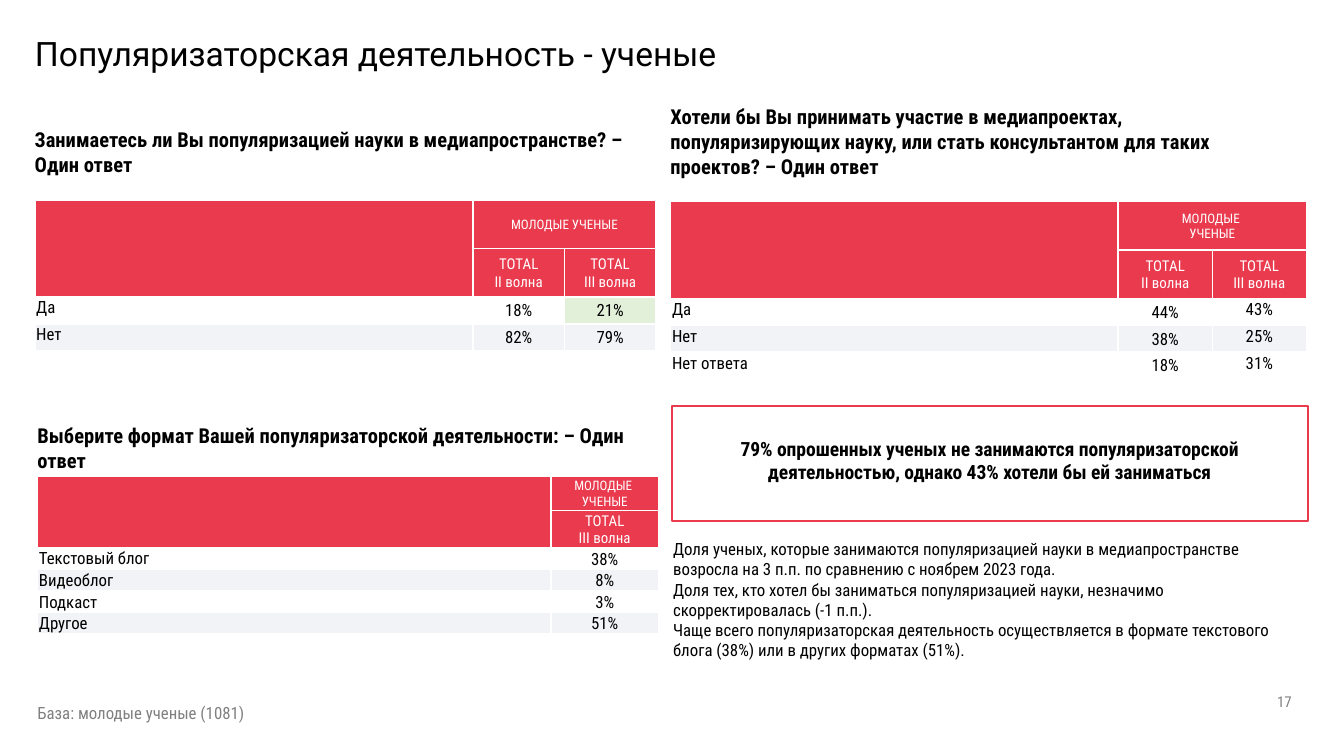
from lxml import etree
from pptx import Presentation
from pptx.dml.color import RGBColor
from pptx.enum import shapes, text
from pptx.oxml.ns import qn
from pptx.util import Inches, Pt

COLORS = {"red": "E93A4E", "white": "FFFFFF", "black": "000000",
          "gray": "808080", "stripe": "F2F3F6", "green": "E2F0D9"}
FONT = "Roboto Condensed"
LEFT, CENTER, RIGHT = text.PP_ALIGN.LEFT, text.PP_ALIGN.CENTER, text.PP_ALIGN.RIGHT
TOP, MIDDLE = text.MSO_ANCHOR.TOP, text.MSO_ANCHOR.MIDDLE


def write(frame, lines, size, color="black", bold=False, align=LEFT, spacing=None, font=FONT):
    for index, line in enumerate(lines):
        paragraph = frame.paragraphs[0] if index == 0 else frame.add_paragraph()
        paragraph.alignment = align
        paragraph.line_spacing = spacing
        run = paragraph.add_run()
        run.text = line
        run.font.name = font
        run.font.size = Pt(size)
        run.font.bold = bold
        run.font.color.rgb = RGBColor.from_string(COLORS[color])


def format_cell(cell, lines, size, color, fill, align, anchor):
    cell.margin_left = cell.margin_right = cell.margin_top = Inches(0.01)
    cell.margin_bottom = 0
    cell.vertical_anchor = anchor
    properties = cell._tc.get_or_add_tcPr()
    for side in ("a:lnL", "a:lnR", "a:lnT", "a:lnB"):
        border = etree.SubElement(properties, qn(side), w=str(Pt(1)))
        solid = etree.SubElement(border, qn("a:solidFill"))
        etree.SubElement(solid, qn("a:srgbClr"), val=COLORS["white"])
    if fill:
        cell.fill.solid()
        cell.fill.fore_color.rgb = RGBColor.from_string(COLORS[fill])
    else:
        cell.fill.background()
    if lines:
        write(cell.text_frame, lines, size, color, align=align)
    else:
        # Keeps an empty cell from stretching its row
        etree.SubElement(cell.text_frame.paragraphs[0]._p, qn("a:endParaRPr"), sz=str(size * 100))


# Widescreen slide, 16:9
presentation = Presentation()
presentation.slide_width = Inches(10)
presentation.slide_height = Inches(10) * 9 // 16
slide = presentation.slides.add_slide(presentation.slide_layouts[5])

# Title
title = slide.shapes.title
title.left, title.top, title.width, title.height = map(Inches, (0.16, 0.15, 8.62, 1.09))
frame = title.text_frame
frame.auto_size = text.MSO_AUTO_SIZE.NONE
frame.vertical_anchor = TOP
frame.margin_top = Inches(0.12)
write(frame, ["Популяризаторская деятельность - ученые"], 18, spacing=Pt(20), font="Roboto")

# Callout frame
callout = slide.shapes.add_shape(shapes.MSO_SHAPE.RECTANGLE, Inches(5), Inches(3.02),
                                 Inches(4.73), Inches(0.86))
callout.shadow.inherit = False
callout.fill.background()
callout.line.color.rgb = RGBColor.from_string(COLORS["red"])
callout.line.width = Pt(1)

# Question headings
headings = [
    (0.16, 0.84, "Занимаетесь ли Вы популяризацией науки в медиапространстве? – Один ответ"),
    (4.89, 0.67, "Хотели бы Вы принимать участие в медиапроектах, популяризирующих науку, "
                 "или стать консультантом для таких проектов? – Один ответ"),
    (0.18, 3.04, "Выберите формат Вашей популяризаторской деятельности: – Один ответ"),
]
for left, top, question in headings:
    box = slide.shapes.add_textbox(Inches(left), Inches(top), Inches(4.73), Inches(0.45))
    frame = box.text_frame
    frame.word_wrap = True
    frame.margin_left = frame.margin_right = frame.margin_top = frame.margin_bottom = Inches(0.1)
    write(frame, [question], 11, bold=True, spacing=1.02)

# Conclusion, comments, base and page number
notes = [
    ((5, 3.2, 4.73, 0.45), 10.5, "black", True, CENTER, TOP,
     ["79% опрошенных ученых не занимаются популяризаторской деятельностью, "
      "однако 43% хотели бы ей заниматься"]),
    ((4.91, 3.96, 4.82, 1.01), 9, "black", False, LEFT, TOP,
     ["Доля ученых, которые занимаются популяризацией науки в медиапространстве возросла "
      "на 3 п.п. по сравнению с ноябрем 2023 года.",
      "Доля тех, кто хотел бы заниматься популяризацией науки, незначимо скорректировалась (-1 п.п.).",
      "Чаще всего популяризаторская деятельность осуществляется в формате текстового блога (38%) "
      "или в других форматах (51%)."]),
    ((0.18, 5.18, 4.82, 0.25), 9, "gray", False, LEFT, TOP, ["База: молодые ученые (1081)"]),
    ((7.46, 5.07, 2.25, 0.3), 8, "gray", False, RIGHT, MIDDLE, ["17"]),
]
for position, size, color, bold, align, anchor, lines in notes:
    box = slide.shapes.add_textbox(*map(Inches, position))
    box.text_frame.word_wrap = True
    box.text_frame.vertical_anchor = anchor
    write(box.text_frame, lines, size, color, bold, align)

# Tables: place, column widths, header and body row heights, group lines, waves,
# anchor of the last column, highlighted cell, body rows
tables = [
    (0.26, 1.49, (3.26, 0.68, 0.68), 0.36, 0.2, ["МОЛОДЫЕ УЧЕНЫЕ"], ("II", "III"),
     MIDDLE, (2, 2), [("Да", "18%", "21%"), ("Нет", "82%", "79%")]),
    (4.99, 1.5, (3.33, 0.7, 0.7), 0.36, 0.2, ["МОЛОДЫЕ ", "УЧЕНЫЕ"], ("II", "III"),
     TOP, None, [("Да", "44%", "43%"), ("Нет", "38%", "25%"), ("Нет ответа", "18%", "31%")]),
    (0.28, 3.54, (3.82, 0.8), 0.26, 0.16, ["МОЛОДЫЕ ", "УЧЕНЫЕ"], ("III",),
     MIDDLE, None, [("Текстовый блог", "38%"), ("Видеоблог", "8%"), ("Подкаст", "3%"),
                    ("Другое", "51%")]),
]
for left, top, widths, head, body, group, waves, last_anchor, highlight, answers in tables:
    heights = [head] * 2 + [body] * len(answers)
    table = slide.shapes.add_table(len(heights), len(widths), Inches(left), Inches(top),
                                   Inches(sum(widths)), Inches(sum(heights))).table
    table.first_row = table.horz_banding = False
    for column, width in zip(table.columns, widths):
        column.width = Inches(width)
    for row, height in zip(table.rows, heights):
        row.height = Inches(height)

    # Two header rows
    last = len(widths) - 1
    headers = [[[], group] + [[]] * (last - 1),
               [[]] + [["TOTAL", f"{wave} волна"] for wave in waves]]
    for r, header in enumerate(headers):
        for c, lines in enumerate(header):
            format_cell(table.cell(r, c), lines, 7 + r, "white", "red", CENTER, MIDDLE)
    table.cell(0, 0).merge(table.cell(1, 0))
    if last > 1:
        table.cell(0, 1).merge(table.cell(0, last))

    # Answers
    for r, answer in enumerate(answers, start=2):
        for c, value in enumerate(answer):
            fill = "green" if (r, c) == highlight else "stripe" if r % 2 else None
            anchor = TOP if c == 0 else last_anchor if c == last else MIDDLE
            format_cell(table.cell(r, c), [value], 9, "black", fill, CENTER if c else LEFT, anchor)

presentation.save("out.pptx")
